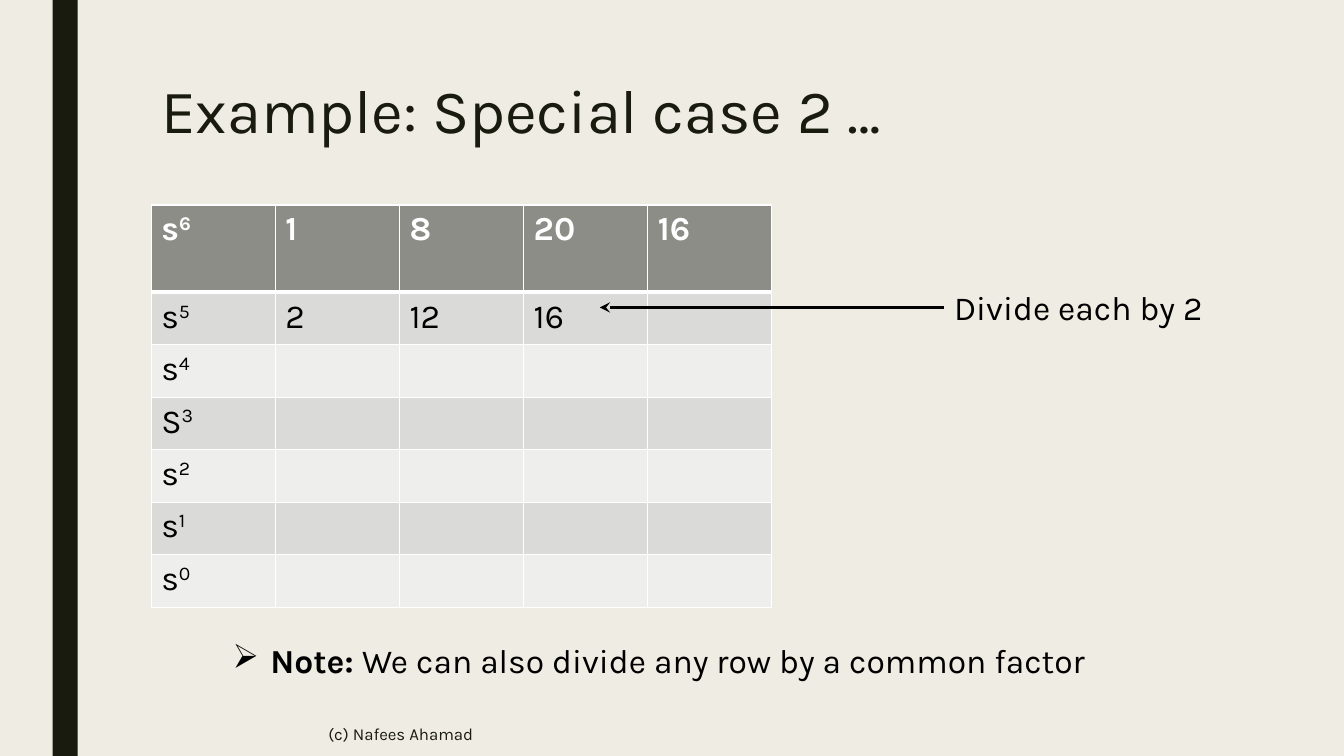
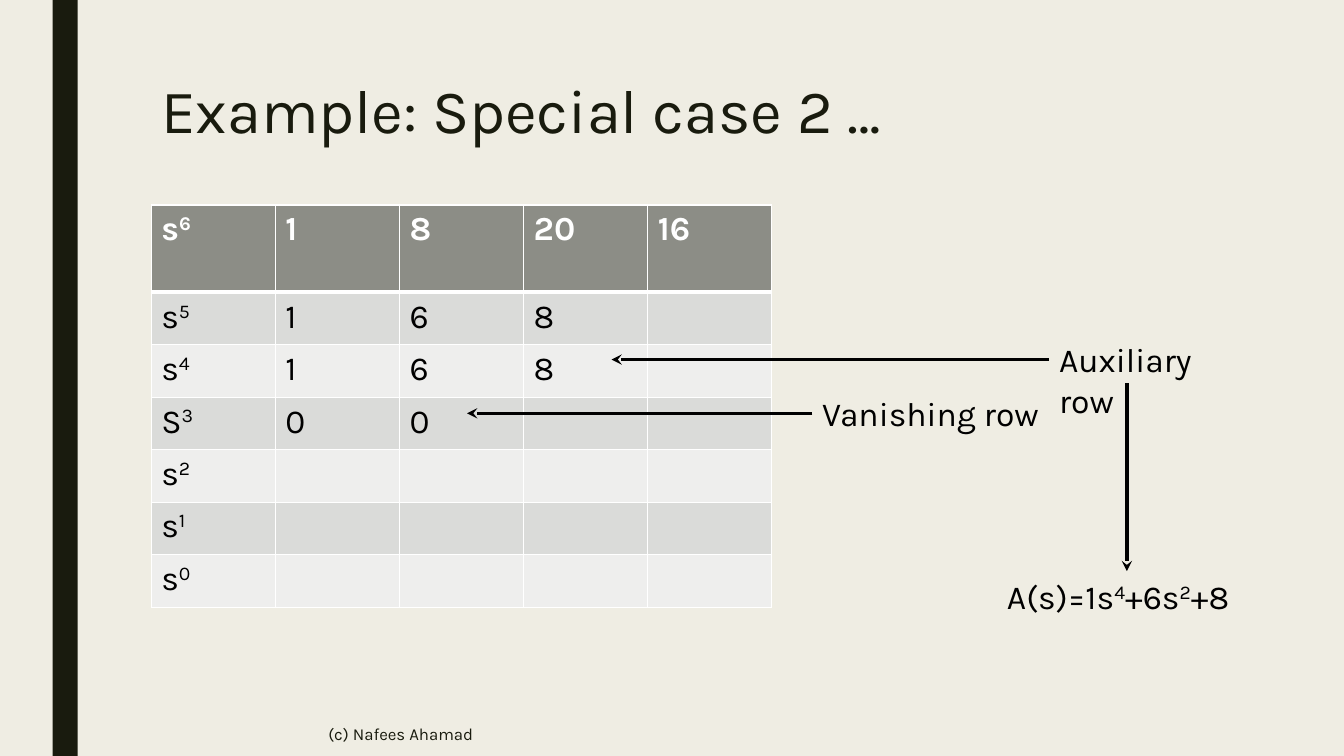
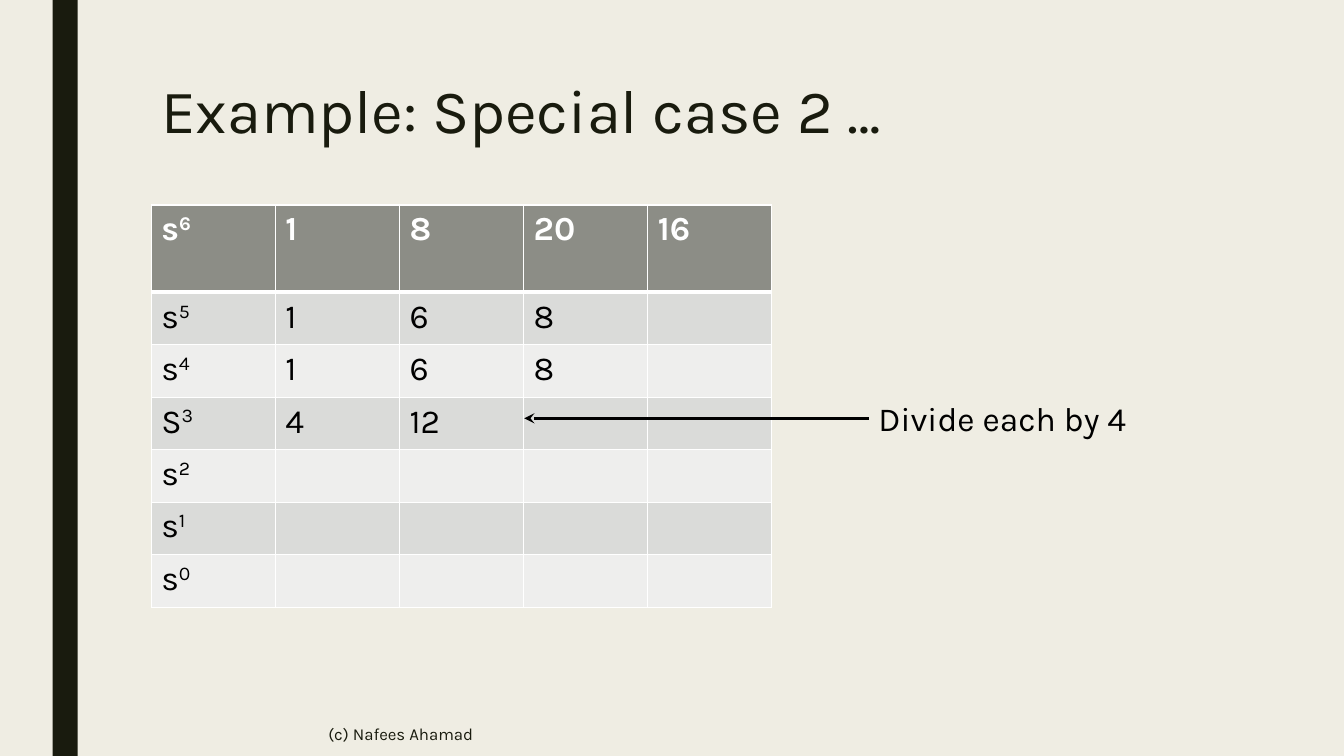
import pptx
import pptx.dml.color
import pptx.enum.shapes
import pptx.enum.text
import pptx.oxml
import pptx.oxml.ns
import pptx.util
from lxml import etree

COLS, ROWS = 160, 90
FONT = "Karla"
COLORS = {
    "paper": "EFEDE3",
    "ink": "191B0E",
    "text": "000000",
    "white": "FFFFFF",
    "header": "8C8D86",
    "odd": "DADBD9",
    "even": "EEEEED",
}
FORMATS = {
    "title": {"size": pptx.util.Pt(44), "bold": False, "color": "ink"},
    "body": {"size": pptx.util.Pt(24), "bold": False, "color": "text"},
    "strong": {"size": pptx.util.Pt(24), "bold": True, "color": "text"},
    "header": {"size": pptx.util.Pt(24), "bold": True, "color": "white"},
    "footer": {"size": pptx.util.Pt(12), "bold": False, "color": "ink"},
}
TITLE = "Example: Special case 2 …"
FOOTER = "(c) Nafees Ahamad"
POWERS = ["s^6", "s^5", "s^4", "S^3", "s^2", "s^1", "s^0"]
FIRST_ROW = ["1", "8", "20", "16"]
COL_WIDTH, HEADER_HEIGHT, ROW_HEIGHT = 14.78, 10.4, 6.25
LABEL_HEIGHT = 6


def rgb(name):
    return pptx.dml.color.RGBColor.from_string(COLORS[name])


def add_xml(parent, tag, **attrs):
    child = etree.SubElement(parent, pptx.oxml.ns.qn(tag))
    for key, value in attrs.items():
        child.set(key, str(value))
    return child


class Deck:
    def __init__(self):
        self.prs = pptx.Presentation()
        self.prs.slide_width = pptx.util.Inches(40 / 3)
        self.prs.slide_height = pptx.util.Inches(7.5)
        fill = self.prs.slide_master.background.fill
        fill.solid()
        fill.fore_color.rgb = rgb("paper")
        self.s = None

    def x(self, cols):
        return round(self.prs.slide_width * cols / COLS)

    def y(self, rows):
        return round(self.prs.slide_height * rows / ROWS)

    def box(self, left, top, width, height):
        return self.x(left), self.y(top), self.x(width), self.y(height)

    def slide(self):
        self.s = self.prs.slides.add_slide(self.prs.slide_layouts[6])
        self.band(6.25, 0, 3, ROWS)
        title = self.text(TITLE, (18, 9, 126, 19.5), "title")
        title.text_frame.paragraphs[0].line_spacing = 0.89
        footer = self.text(FOOTER, (37.9, 84.7, 82.4, 5.3), "footer")
        footer.text_frame.vertical_anchor = pptx.enum.text.MSO_ANCHOR.MIDDLE

    def band(self, *place):
        sp = self.s.shapes.add_shape(
            pptx.enum.shapes.MSO_SHAPE.RECTANGLE, *self.box(*place))
        sp.shadow.inherit = False
        sp.fill.solid()
        sp.fill.fore_color.rgb = rgb("ink")
        sp.line.fill.background()

    def runs(self, p, text, style):
        for i, part in enumerate(text.split("^")):
            if not part:
                continue
            r = p.add_run()
            r.text = part
            r.font.name = FONT
            for key, value in FORMATS[style].items():
                if key == "color":
                    r.font.color.rgb = rgb(value)
                else:
                    setattr(r.font, key, value)
            if i % 2:
                r._r.get_or_add_rPr().set("baseline", "30000")

    def text(self, text, place, style="body", lead=""):
        sp = self.s.shapes.add_textbox(*self.box(*place))
        tf = sp.text_frame
        tf.word_wrap = True
        p = tf.paragraphs[0]
        self.runs(p, lead, "strong")
        self.runs(p, text, style)
        return sp

    def note(self, lead, text, place):
        sp = self.text(text, place, lead=lead)
        pPr = sp.text_frame.paragraphs[0]._p.get_or_add_pPr()
        pPr.set("marL", str(self.x(4.5)))
        pPr.set("indent", str(-self.x(4.5)))
        add_xml(pPr, "a:buChar", char="➢")

    def arrow(self, x1, y1, x2, y2):
        c = self.s.shapes.add_connector(
            pptx.enum.shapes.MSO_CONNECTOR.STRAIGHT,
            self.x(x1), self.y(y1), self.x(x2), self.y(y2))
        c.line.color.rgb = rgb("text")
        c.line.width = pptx.util.Pt(2.5)
        add_xml(c.line._get_or_add_ln(), "a:tailEnd", type="stealth")
        add_xml(c._element.spPr, "a:effectLst")
        return c

    def callout(self, text, left, top, tip, width=34.4):
        sp = self.text(text, (left, top, width, LABEL_HEIGHT))
        middle = top + LABEL_HEIGHT / 2
        self.arrow(left, middle, tip, middle).begin_connect(sp, 1)

    def result(self, text, left, top, width, start):
        sp = self.text(text, (left, top, width, LABEL_HEIGHT))
        middle = left + width / 2
        self.arrow(middle, start, middle, top).end_connect(sp, 0)

    def cell(self, cell, text, row):
        tcPr = cell._tc.get_or_add_tcPr()
        thick = {0: "B", 1: "T"}.get(row)
        for side in "LRTB":
            width = pptx.util.Pt(3 if side == thick else 1)
            ln = add_xml(tcPr, "a:ln" + side, w=int(width))
            add_xml(add_xml(ln, "a:solidFill"), "a:srgbClr",
                    val=COLORS["white"])
        cell.fill.solid()
        shade = "header" if row == 0 else ("even", "odd")[row % 2]
        cell.fill.fore_color.rgb = rgb(shade)
        self.runs(cell.text_frame.paragraphs[0], text,
                  "header" if row == 0 else "body")

    def routh_table(self, *value_rows):
        cols = len(FIRST_ROW) + 1
        height = HEADER_HEIGHT + (len(POWERS) - 1) * ROW_HEIGHT
        table = self.s.shapes.add_table(
            len(POWERS), cols,
            *self.box(18, 24.4, cols * COL_WIDTH, height)).table
        table.horz_banding = False
        for col in table.columns:
            col.width = self.x(COL_WIDTH)
        values = [FIRST_ROW, *value_rows]
        for i, power in enumerate(POWERS):
            table.rows[i].height = self.y(ROW_HEIGHT if i else HEADER_HEIGHT)
            texts = [power] + (values[i] if i < len(values) else [])
            for j in range(cols):
                self.cell(table.cell(i, j),
                          texts[j] if j < len(texts) else "", i)


def main():
    deck = Deck()
    reduced = ["1", "6", "8"]

    deck.slide()
    deck.routh_table(["2", "12", "16"])
    deck.note("Note: ", "We can also divide any row by a common factor",
              (26.5, 75.6, 109.1, LABEL_HEIGHT))
    deck.callout("Divide each by 2", 112.4, 33.6, 71.4)

    deck.slide()
    deck.routh_table(reduced, reduced, ["0", "0"])
    deck.callout("Vanishing row", 96.7, 46.2, 55.6)
    deck.callout("Auxiliary row", 124.9, 39.8, 72.8, 23.8)
    deck.result("A(s)=1s^4^+6s^2^+8", 118.7, 68, 30.9, 45.6)

    deck.slide()
    deck.routh_table(reduced, reduced, ["4", "12"])
    deck.callout("Divide each by 4", 103.4, 46.8, 62.4)

    deck.prs.save("out.pptx")


if __name__ == "__main__":
    main()
